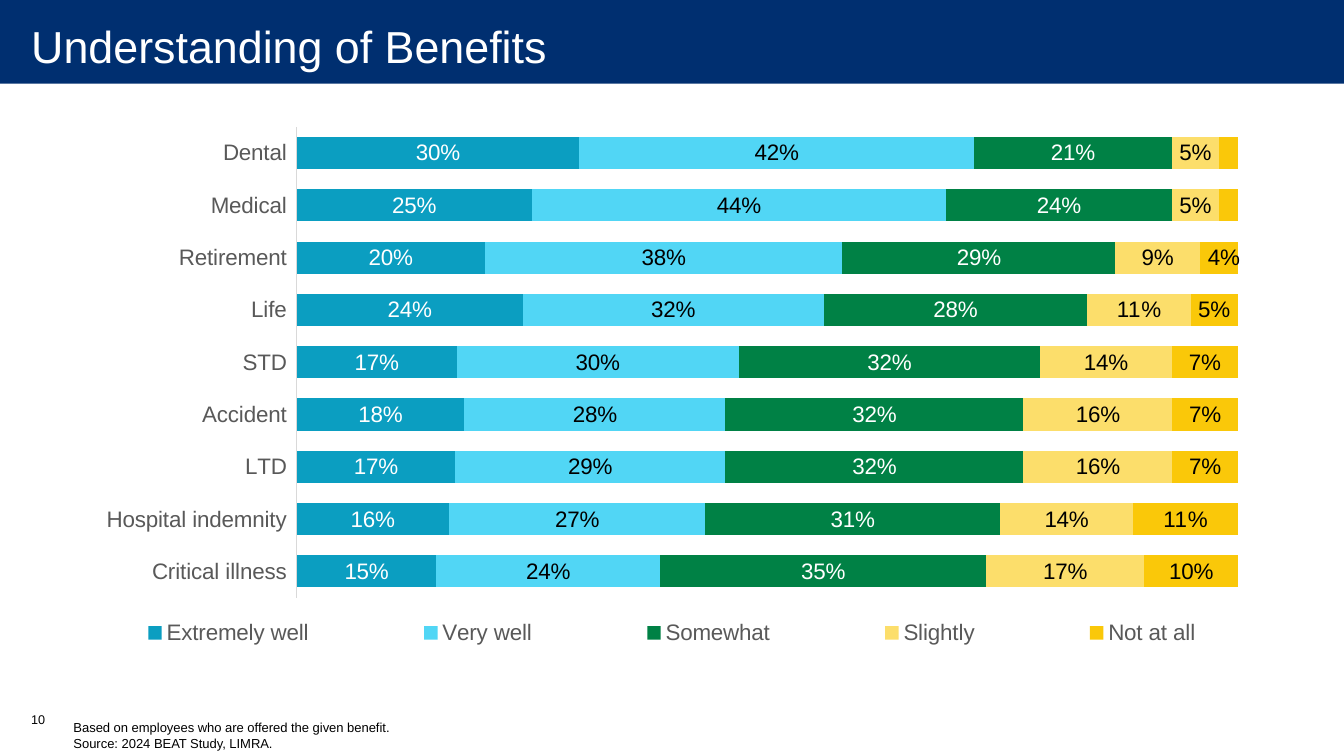
from dataclasses import dataclass

from lxml.etree import SubElement
from pptx import Presentation
from pptx.chart.data import CategoryChartData
from pptx.dml.color import RGBColor
from pptx.enum.chart import XL_CHART_TYPE as ChartType
from pptx.enum.chart import XL_LABEL_POSITION as LabelPos
from pptx.enum.chart import XL_LEGEND_POSITION as LegendPos
from pptx.enum.chart import XL_TICK_LABEL_POSITION as TickLabel
from pptx.enum.chart import XL_TICK_MARK as Tick
from pptx.enum.shapes import MSO_SHAPE as Shape
from pptx.enum.text import MSO_ANCHOR as Anchor
from pptx.enum.text import MSO_AUTO_SIZE as AutoSize
from pptx.enum.text import PP_ALIGN as Align
from pptx.oxml.ns import qn
from pptx.util import Pt

FONT = "Arial"
COLORS = {
    "navy": "002F70", "white": "FFFFFF", "black": "000000",
    "gray": "595959", "rule": "D9D9D9", "teal": "0B9EC1",
    "sky": "51D6F5", "green": "008145", "sand": "FCDE6B", "gold": "FAC809",
}
BENEFITS = ["Critical illness", "Hospital indemnity", "LTD", "Accident", "STD",
            "Life", "Retirement", "Medical", "Dental"]


@dataclass
class Level:
    name: str
    percents: list[int]
    fill: str
    label: str


@dataclass
class Note:
    lines: list[str]
    box: tuple[float, float, float, float]
    size: float


LEVELS = [
    Level("Extremely well", [15, 16, 17, 18, 17, 24, 20, 25, 30], "teal", "white"),
    Level("Very well", [24, 27, 29, 28, 30, 32, 38, 44, 42], "sky", "black"),
    Level("Somewhat", [35, 31, 32, 32, 32, 28, 29, 24, 21], "green", "white"),
    Level("Slightly", [17, 14, 16, 16, 14, 11, 9, 5, 5], "sand", "black"),
    Level("Not at all", [10, 11, 7, 7, 7, 5, 4, 2, 2], "gold", "black"),
]
NOTES = [
    Note(["Based on employees who are offered the given benefit.",
          "Source: 2024 BEAT Study, LIMRA."], (45.4, 510.5, 481, 29.5), 9.3),
    Note(["10"], (15.1, 504.7, 35.3, 28.8), 9),
]


def rgb(name: str) -> RGBColor:
    return RGBColor.from_string(COLORS[name])


def set_all(obj, values: dict) -> None:
    for key, value in values.items():
        setattr(obj, key, value)


def set_font(font, size: float, color: str) -> None:
    set_all(font, {"name": FONT, "size": Pt(size), "bold": False})
    font.color.rgb = rgb(color)


def place(box: tuple) -> list:
    return [Pt(v) for v in box]


def add_layout(after, **values) -> None:
    """Insert a manual chart layout after the given element."""
    layout = after.makeelement(qn("c:layout"))
    manual = SubElement(layout, qn("c:manualLayout"))
    for tag, value in values.items():
        SubElement(manual, qn(f"c:{tag}")).set("val", str(value))
    after.addnext(layout)


def add_title(slide, text: str) -> None:
    title = slide.shapes.title
    set_all(title, dict(zip(("left", "top", "width", "height"),
                            place((0.7, -2.2, 960, 69.8)))))
    tf = title.text_frame
    set_all(tf, {"text": text, "word_wrap": False, "auto_size": AutoSize.NONE,
                 "vertical_anchor": Anchor.MIDDLE, "margin_left": Pt(21.6),
                 "margin_right": Pt(14.4), "margin_top": 0, "margin_bottom": 0})
    p = tf.paragraphs[0]
    p.alignment = Align.LEFT
    set_font(p.runs[0].font, 32, "white")

    # Band behind the title
    band = slide.shapes.add_shape(Shape.RECTANGLE, *place((0, -2.2, 960, 62)))
    band.shadow.inherit = False
    band.fill.solid()
    band.fill.fore_color.rgb = rgb("navy")
    band.line.fill.background()
    title._element.addprevious(band._element)


def style_series(ser, level: Level) -> None:
    ser.format.fill.solid()
    ser.format.fill.fore_color.rgb = rgb(level.fill)
    labels = ser.data_labels
    set_all(labels, {"show_value": True, "position": LabelPos.CENTER,
                     "number_format": "0%", "number_format_is_linked": False})
    set_font(labels.font, 16, level.label)

    # Nudge the narrow 4% label; drop the ones too narrow to fit
    for i, percent in enumerate(level.percents):
        if percent > 4:
            continue
        label = ser.points[i].data_label
        label.position = LabelPos.CENTER
        set_font(label.font, 16, level.label)
        el = labels._element.findall(qn("c:dLbl"))[-1]
        idx = el.find(qn("c:idx"))
        if percent == 4:
            add_layout(idx, x=0.004, y=0)
        else:
            for child in list(el)[1:]:
                el.remove(child)
            SubElement(el, qn("c:delete")).set("val", "1")


def add_benefit_chart(slide) -> None:
    data = CategoryChartData(number_format="0%")
    data.categories = BENEFITS
    for level in LEVELS:
        data.add_series(level.name, [v / 100 for v in level.percents])
    chart = slide.shapes.add_chart(ChartType.BAR_STACKED_100,
                                   *place((28.8, 73.4, 902.2, 392.4)), data).chart
    set_all(chart, {"has_title": False, "has_legend": True})
    set_font(chart.font, 16, "black")

    # Bars
    plot = chart.plots[0]
    set_all(plot, {"gap_width": 63, "overlap": 100, "vary_by_categories": False})
    for ser, level in zip(plot.series, LEVELS):
        style_series(ser, level)

    # Axes
    cat, val = chart.category_axis, chart.value_axis
    set_all(cat, {"major_tick_mark": Tick.NONE, "minor_tick_mark": Tick.NONE,
                  "tick_label_position": TickLabel.LOW})
    set_font(cat.tick_labels.font, 16, "gray")
    cat.format.line.color.rgb = rgb("rule")
    cat.format.line.width = Pt(0.75)
    set_all(val, {"visible": False, "has_major_gridlines": False,
                  "minimum_scale": 0, "maximum_scale": 1})

    # Legend and plot positions
    legend = chart.legend
    set_all(legend, {"position": LegendPos.BOTTOM, "include_in_layout": False})
    set_font(legend.font, 16, "gray")
    el = legend._element
    for old in el.findall(qn("c:layout")):
        el.remove(old)
    add_layout(el.find(qn("c:legendPos")), xMode="edge", yMode="edge",
               x=0, y=0.93, w=1, h=0.07)
    area = chart._chartSpace.find(f".//{qn('c:plotArea')}")
    for old in area.findall(qn("c:layout")):
        area.remove(old)
    add_layout(area[0], layoutTarget="inner", xMode="edge", yMode="edge",
               x=0.203, y=0.044, w=0.745, h=0.857)
    area.insert(0, area.find(qn("c:layout")))


def add_note(slide, note: Note) -> None:
    tf = slide.shapes.add_textbox(*place(note.box)).text_frame
    tf.word_wrap = True
    for i, line in enumerate(note.lines):
        p = tf.add_paragraph() if i else tf.paragraphs[0]
        r = p.add_run()
        r.text = line
        set_font(r.font, note.size, "black")


def main() -> None:
    prs = Presentation()
    set_all(prs, {"slide_width": Pt(960), "slide_height": Pt(540)})
    slide = prs.slides.add_slide(prs.slide_layouts[5])
    add_title(slide, "Understanding of Benefits")
    add_benefit_chart(slide)
    for note in NOTES:
        add_note(slide, note)
    prs.save("out.pptx")


if __name__ == "__main__":
    main()
